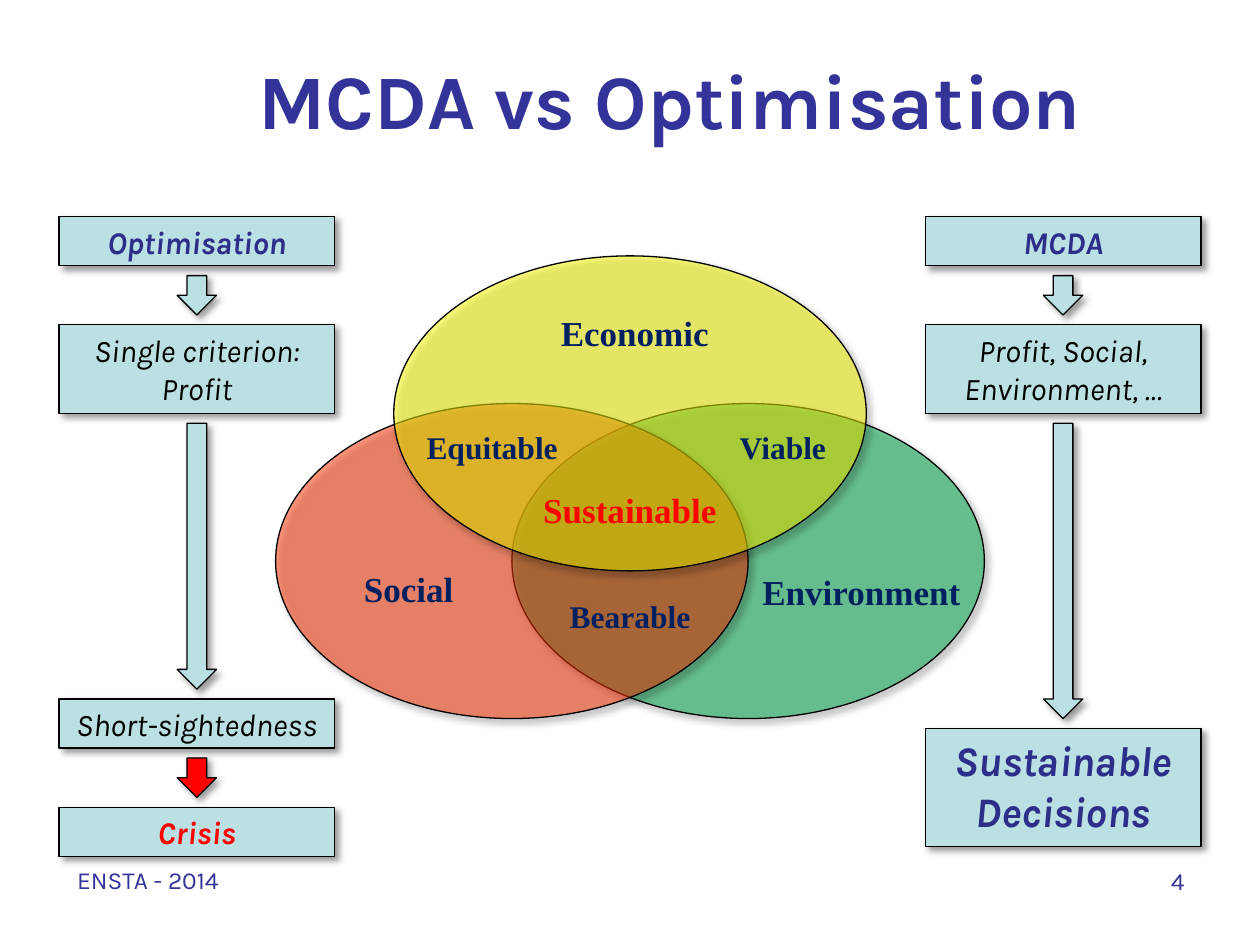
from lxml.etree import SubElement
from pptx import Presentation
from pptx.dml.color import RGBColor
from pptx.enum.shapes import MSO_SHAPE as Shape
from pptx.enum.text import MSO_ANCHOR as Anchor, PP_ALIGN as Align
from pptx.oxml.ns import qn
from pptx.util import Pt

SANS, SERIF = "Karla", "Times New Roman"
INDIGO, NAVY, BLUE = "333399", "002060", "2D2D8A"
BLACK, RED, PALE = "000000", "FF0000", "BBE0E3"
GAP, COLUMN_WIDTH, ARROW_WIDTH = 5.63, 157.5, 22.5


def rgb(code):
    return RGBColor.from_string(code)


def write(box, text, size=18, font=SANS, color=BLACK, bold=False, italic=False,
          align=Align.CENTER, anchor=Anchor.TOP):
    frame = box.text_frame
    frame.word_wrap = True
    frame.vertical_anchor = anchor
    for index, line in enumerate(text.split("\n")):
        para = frame.paragraphs[0] if index == 0 else frame.add_paragraph()
        para.alignment = align
        span = para.add_run()
        span.text = line
        span.font.size = Pt(size)
        span.font.name = font
        span.font.bold = bold
        span.font.italic = italic
        span.font.color.rgb = rgb(color)


class Page:
    """Draws styled elements on one slide."""

    def __init__(self, deck):
        self.shapes = deck.slides.add_slide(deck.slide_layouts[6]).shapes

    def label(self, text, left, top, width, height, **style):
        box = self.shapes.add_textbox(Pt(left), Pt(top), Pt(width), Pt(height))
        write(box, text, **style)

    def figure(self, kind, left, top, width, height, fill=PALE, opacity=100):
        shape = self.shapes.add_shape(kind, Pt(left), Pt(top), Pt(width), Pt(height))
        shape.fill.solid()
        shape.fill.fore_color.rgb = rgb(fill)
        shape.line.color.rgb = rgb(BLACK)
        shape.line.width = Pt(0.75)
        if opacity < 100:
            color = shape.fill._xPr.find(qn("a:solidFill"))[0]
            SubElement(color, qn("a:alpha"), val=str(opacity * 1000))
        self.shadow(shape)
        return shape

    def shadow(self, shape):
        shape.shadow.inherit = False
        effects = shape._element.spPr.find(qn("a:effectLst"))
        outer = SubElement(effects, qn("a:outerShdw"), blurRad=str(Pt(4)),
                           dist=str(Pt(3)), dir=str(45 * 60000),
                           algn="tl", rotWithShape="0")
        color = SubElement(outer, qn("a:srgbClr"), val=BLACK)
        SubElement(color, qn("a:alpha"), val="40000")

    def flow(self, left, top, steps):
        for text, height, style in steps:
            if text:
                box = self.figure(Shape.FLOWCHART_PROCESS, left, top, COLUMN_WIDTH, height)
                write(box, text, italic=True, **style)
            else:
                middle = left + (COLUMN_WIDTH - ARROW_WIDTH) / 2
                self.figure(Shape.DOWN_ARROW, middle, top, ARROW_WIDTH, height, **style)
            top += height + GAP


def main():
    deck = Presentation()
    deck.slide_width, deck.slide_height = Pt(720), Pt(540)
    page = Page(deck)

    page.label("MCDA vs Optimisation", 82, 11.5, 602, 90, size=44,
               color=INDIGO, bold=True, anchor=Anchor.MIDDLE)
    footer = dict(size=14, color=INDIGO)
    page.label("ENSTA - 2014", 37, 491, 238, 37.5, align=Align.LEFT, **footer)
    page.label("4", 516, 491.5, 168, 37.5, align=Align.RIGHT, **footer)

    for left, top, fill in [(292.5, 230.63, "00B050"), (157.5, 230.63, "FF3300"),
                            (225, 146.25, "FFFF00")]:
        page.figure(Shape.OVAL, left, top, 270, 180, fill, opacity=50)

    for text, left, top, width, size, color in [
        ("Social", 191.25, 320.5, 84.5, 20, NAVY),
        ("Environment", 416.25, 322.5, 152, 20, NAVY),
        ("Economic", 303.75, 174.4, 118, 20, NAVY),
        ("Equitable", 236.25, 241, 90, 18, NAVY),
        ("Sustainable", 298, 275.6, 124, 20, RED),
        ("Bearable", 315, 337.5, 90, 18, NAVY),
        ("Viable", 410.6, 241, 73.5, 18, NAVY),
    ]:
        page.label(text, left, top, width, size * 1.6, size=size,
                   font=SERIF, color=color, bold=True)

    heading = dict(color=BLUE, bold=True)
    page.flow(33.75, 123.75, [
        ("Optimisation", 28.13, heading),
        (None, 22.5, {}),
        ("Single criterion:\nProfit", 50.63, {}),
        (None, 151.88, {}),
        ("Short-sightedness", 28.13, {}),
        (None, 22.5, dict(fill=RED)),
        ("Crisis", 28.13, dict(color=RED, bold=True)),
    ])
    page.flow(528.75, 123.75, [
        ("MCDA", 28.13, heading),
        (None, 22.5, {}),
        ("Profit, Social, Environment, …", 50.63, {}),
        (None, 168.75, {}),
        ("Sustainable Decisions", 67.5, dict(size=24, **heading)),
    ])
    deck.save("out.pptx")


if __name__ == "__main__":
    main()
